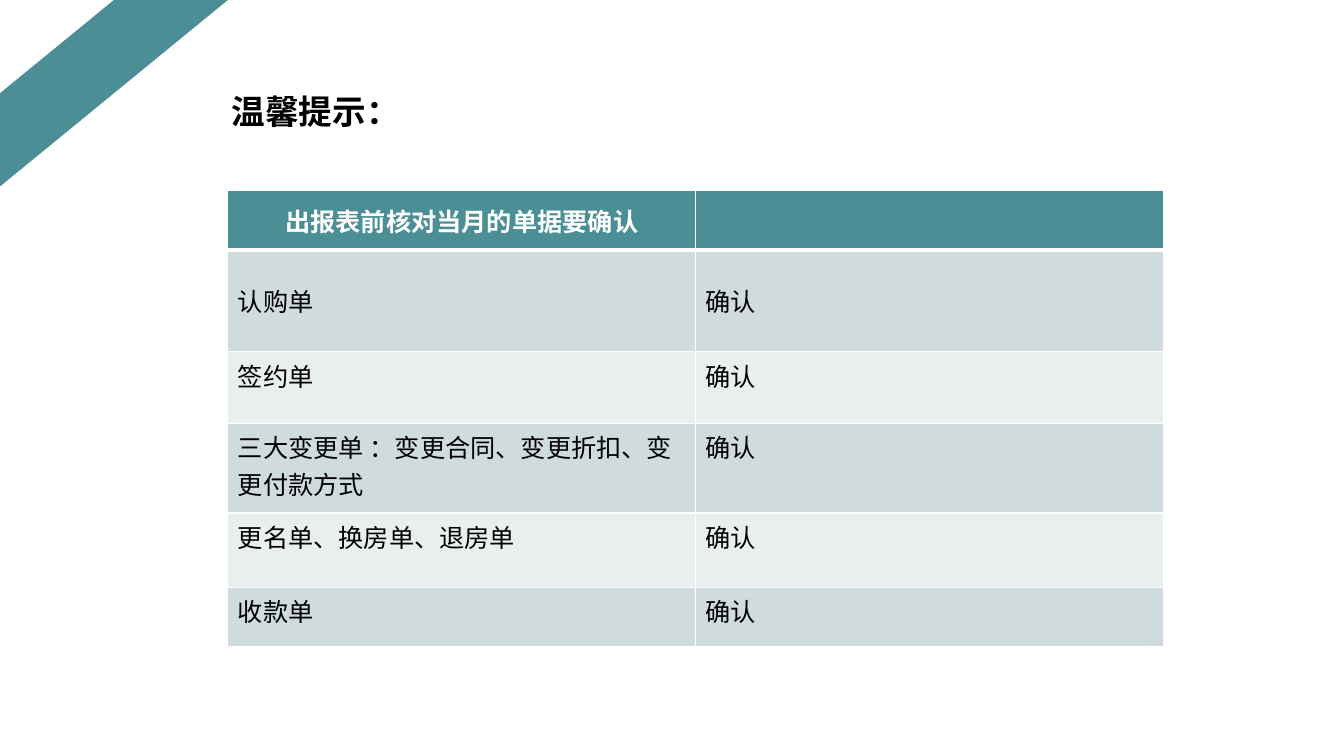
from dataclasses import dataclass

from lxml.etree import SubElement
from pptx import Presentation
from pptx.dml.color import RGBColor
from pptx.enum.shapes import MSO_SHAPE
from pptx.enum.text import MSO_ANCHOR, PP_ALIGN
from pptx.oxml.ns import qn
from pptx.util import Inches, Pt


@dataclass(frozen=True)
class Theme:
    """Colours, font and type sizes of the slide."""
    teal: str = "4B8E95"
    bands: tuple = ("D0DBDD", "E9EEEF")
    white: str = "FFFFFF"
    black: str = "000000"
    font: str = "Arial"
    title_size: int = 24
    table_size: int = 18


THEME = Theme()
ROWS = [
    ("出报表前核对当月的单据要确认", ""),
    ("认购单", "确认"),
    ("签约单", "确认"),
    ("三大变更单 ：变更合同、变更折扣、变更付款方式", "确认"),
    ("更名单、换房单、退房单", "确认"),
    ("收款单", "确认"),
]
ROW_HEIGHTS = [0.59, 1.01, 0.71, 0.89, 0.74, 0.59]
COLUMN_WIDTH = 4.64


def set_fill(obj, color):
    """Give a shape or cell a solid fill."""
    obj.fill.solid()
    obj.fill.fore_color.rgb = RGBColor.from_string(color)


def format_runs(tf, size, color, bold=False):
    """Apply font, size, colour and weight to all runs of a text frame."""
    for p in tf.paragraphs:
        for r in p.runs:
            r.font.name = THEME.font
            r.font.size = Pt(size)
            r.font.bold = bold
            r.font.color.rgb = RGBColor.from_string(color)


def set_borders(cell, widths):
    """Draw white cell borders; widths maps side letters to points."""
    tc_pr = cell._tc.get_or_add_tcPr()
    for i, (side, width) in enumerate(widths.items()):
        ln = SubElement(tc_pr, qn(f"a:ln{side}"), w=str(Pt(width)))
        fill = SubElement(ln, qn("a:solidFill"))
        SubElement(fill, qn("a:srgbClr"), val=THEME.white)
        tc_pr.insert(i, ln)


def add_corner_stripe(s):
    """Add the diagonal stripe in the top left corner."""
    sp = s.shapes.add_shape(MSO_SHAPE.DIAGONAL_STRIPE, 0, 0, Inches(2.26), Inches(1.85))
    sp.shadow.inherit = False
    set_fill(sp, THEME.teal)
    sp.line.fill.background()


def add_title(s, text):
    """Add the heading above the table."""
    tf = s.shapes.add_textbox(Inches(2.2), Inches(0.85), Inches(3.86), Inches(0.5)).text_frame
    tf.word_wrap = True
    tf.text = text
    format_runs(tf, THEME.title_size, THEME.black, bold=True)


def fill_cell(cell, text, row):
    """Write and style one table cell according to its row."""
    header = row == 0
    cell.text = text
    cell.vertical_anchor = MSO_ANCHOR.MIDDLE if row < 2 else MSO_ANCHOR.TOP
    if header:
        cell.text_frame.paragraphs[0].alignment = PP_ALIGN.CENTER
    format_runs(cell.text_frame, THEME.table_size, THEME.white if header else THEME.black, header)
    set_fill(cell, THEME.teal if header else THEME.bands[(row - 1) % 2])
    set_borders(cell, {"L": 1, "R": 1, "T": 3 if row == 1 else 1, "B": 3 if header else 1})


def add_checklist(s):
    """Add the table of documents to confirm."""
    columns = len(ROWS[0])
    table = s.shapes.add_table(
        len(ROWS), columns, Inches(2.26), Inches(1.89),
        Inches(COLUMN_WIDTH * columns), Inches(sum(ROW_HEIGHTS))).table
    for column in table.columns:
        column.width = Inches(COLUMN_WIDTH)
    for i, (texts, height) in enumerate(zip(ROWS, ROW_HEIGHTS)):
        table.rows[i].height = Inches(height)
        for j, text in enumerate(texts):
            fill_cell(table.cell(i, j), text, i)


def main():
    """Build the slide and save it."""
    prs = Presentation()
    prs.slide_width, prs.slide_height = Inches(13.33), Inches(7.5)
    s = prs.slides.add_slide(prs.slide_layouts[6])
    add_corner_stripe(s)
    add_checklist(s)
    add_title(s, "温馨提示：")
    prs.save("out.pptx")


if __name__ == "__main__":
    main()
